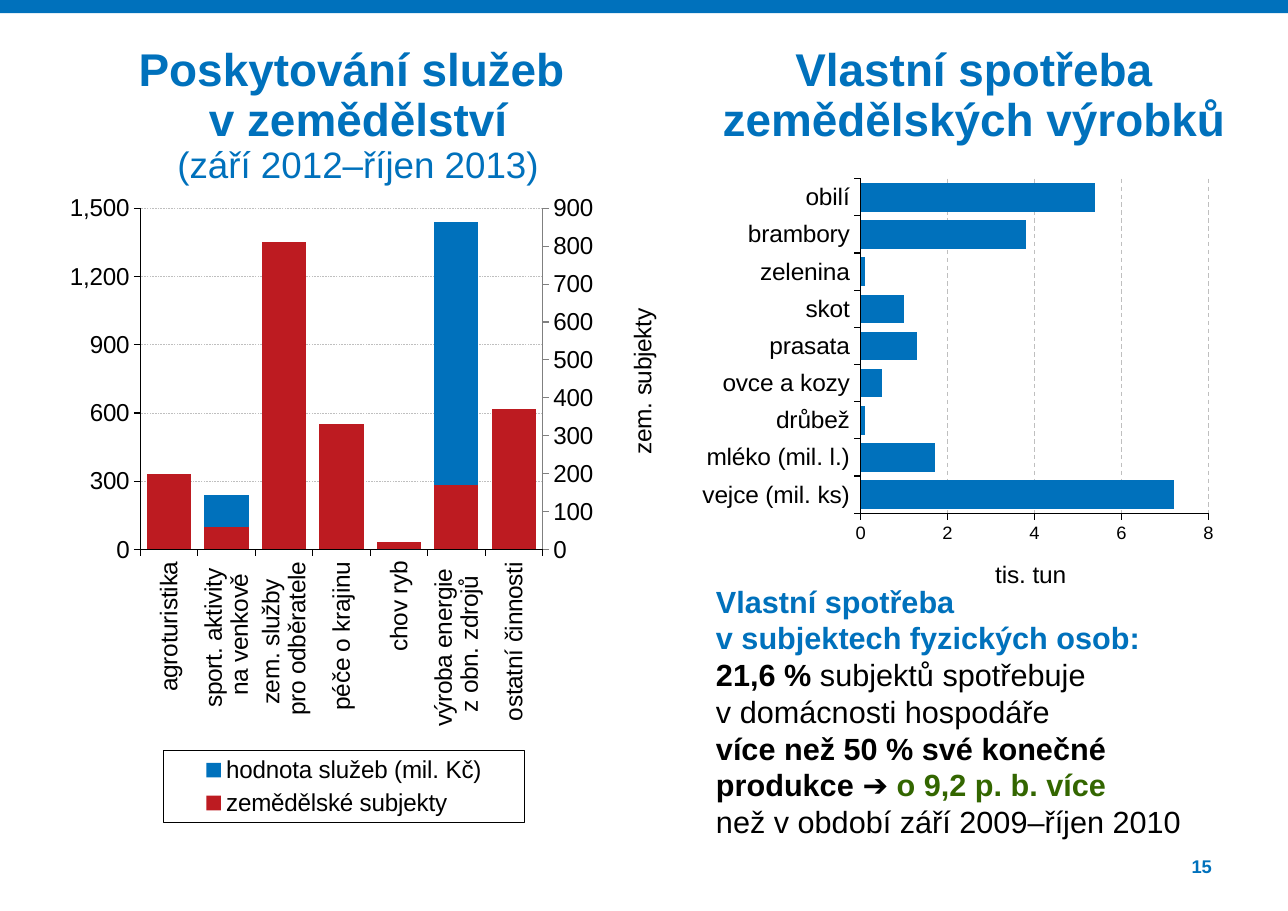
from copy import deepcopy
from dataclasses import dataclass
from typing import Any

from lxml.etree import SubElement
from pptx import Presentation
from pptx.chart.axis import ValueAxis
from pptx.chart.data import CategoryChartData
from pptx.dml.color import RGBColor
from pptx.enum.chart import XL_CHART_TYPE, XL_LEGEND_POSITION, XL_TICK_MARK
from pptx.enum.dml import MSO_LINE
from pptx.enum.shapes import MSO_SHAPE
from pptx.enum.text import MSO_ANCHOR, MSO_AUTO_SIZE, PP_ALIGN
from pptx.oxml.ns import qn
from pptx.util import Inches, Pt

BLUE, RED, GREEN, BLACK, GREY = "0071BC", "BD1B21", "336600", "000000", "BFBFBF"
UP = -5400000
Box = tuple[float, float, float, float]


@dataclass
class Run:
    text: str
    size: float = 20
    color: str = BLACK
    bold: bool = False


@dataclass
class Block:
    box: Box
    paras: list[list[Run]]
    align: Any = PP_ALIGN.CENTER
    inset: tuple[float, float] = (0, 0)
    space: float = 1.0


@dataclass
class Graph:
    box: Box
    kind: Any
    cats: list[str]
    series: dict[str, list[float]]
    plot: Box
    top: float
    step: float
    size: float
    grid: float
    dash: Any


def paint(color: Any, code: str) -> None:
    color.rgb = RGBColor.from_string(code)


def put(item: Any, **values: Any) -> None:
    for name, value in values.items():
        setattr(item, name, value)


def stroke(line: Any, code: str, width: float) -> None:
    line.fill.solid()
    paint(line.fill.fore_color, code)
    line.width = Pt(width)


def style(font: Any, size: float, code: str = BLACK, bold: bool = False) -> None:
    put(font, name="Arial", size=Pt(size), bold=bold)
    paint(font.color, code)


def write(shape: Any, block: Block) -> None:
    left, top, width, height = map(Inches, block.box)
    put(shape, left=left, top=top, width=width, height=height)
    frame = shape.text_frame
    side, edge = map(Inches, block.inset)
    put(frame, word_wrap=True, auto_size=MSO_AUTO_SIZE.NONE, vertical_anchor=MSO_ANCHOR.TOP,
        margin_left=side, margin_right=side, margin_top=edge, margin_bottom=edge)
    for i, runs in enumerate(block.paras):
        para = frame.add_paragraph() if i else frame.paragraphs[0]
        put(para, alignment=block.align, line_spacing=block.space)
        for part in runs:
            run = para.add_run()
            run.text = part.text
            style(run.font, part.size, part.color, part.bold)


def place(node: Any, index: int, spots: dict[str, Any]) -> None:
    """Fix a chart part at a share of the chart area."""
    layout = node.find(qn("c:layout"))
    if layout is None:
        layout = SubElement(node, qn("c:layout"))
        node.insert(index, layout)
    manual = SubElement(layout, qn("c:manualLayout"))
    for name, value in spots.items():
        SubElement(manual, qn(f"c:{name}")).set("val", str(value))


def label(axis: Any, text: str, x: float, y: float, turn: int = 0) -> None:
    axis.has_title = True
    title = axis.axis_title
    frame = title.text_frame
    frame.text = text
    style(frame.paragraphs[0].runs[0].font, 16)
    node = title._element
    node.find(".//" + qn("a:bodyPr")).set("rot", str(turn))
    place(node, 1, {"xMode": "edge", "yMode": "edge", "x": x, "y": y})


def draw(slide: Any, graph: Graph) -> Any:
    data = CategoryChartData(number_format="General")
    data.categories = graph.cats
    for name, values in graph.series.items():
        data.add_series(name, values)
    chart = slide.shapes.add_chart(graph.kind, *map(Inches, graph.box), data).chart
    put(chart, has_title=False, has_legend=False)
    style(chart.font, 16)
    bars = chart.plots[0]
    put(bars, gap_width=30, vary_by_categories=False)
    for row, code in zip(bars.series, (BLUE, RED)):
        row.format.fill.solid()
        paint(row.format.fill.fore_color, code)
    for axis in (chart.category_axis, chart.value_axis):
        put(axis, major_tick_mark=XL_TICK_MARK.OUTSIDE, minor_tick_mark=XL_TICK_MARK.NONE)
        stroke(axis.format.line, BLACK, 0.75)
    axis = chart.value_axis
    put(axis, minimum_scale=0, maximum_scale=graph.top, major_unit=graph.step,
        has_major_gridlines=True)
    style(axis.tick_labels.font, graph.size)
    put(axis.tick_labels, number_format="#,##0", number_format_is_linked=False)
    rule = axis.major_gridlines.format.line
    stroke(rule, GREY, graph.grid)
    rule.dash_style = graph.dash
    area = chart._chartSpace.find(".//" + qn("c:plotArea"))
    modes = {"layoutTarget": "inner", "xMode": "edge", "yMode": "edge"}
    place(area, 0, modes | dict(zip("xywh", graph.plot)))
    return chart


def split(chart: Any) -> ValueAxis:
    """Move the second series to its own axis on the right."""
    bars = chart.plots[0]._element
    cat, val = chart.category_axis._element, chart.value_axis._element
    twin, base, right = map(deepcopy, (bars, cat, val))
    bars.remove(bars.findall(qn("c:ser"))[1])
    twin.remove(twin.find(qn("c:ser")))
    bars.addnext(twin)
    val.addnext(right)
    right.addnext(base)
    for node, code in zip(twin.findall(qn("c:axId")), ("501", "502")):
        node.set("val", code)
    for node, own, other in ((base, "501", "502"), (right, "502", "501")):
        node.find(qn("c:axId")).set("val", own)
        node.find(qn("c:crossAx")).set("val", other)
    base.find(qn("c:delete")).set("val", "1")
    right.find(qn("c:axPos")).set("val", "r")
    right.find(qn("c:crosses")).set("val", "max")
    axis = ValueAxis(right)
    put(axis, maximum_scale=900, major_unit=100, has_major_gridlines=False)
    stroke(axis.format.line, "808080", 0.75)
    return axis


FARMS = Graph(
    (0, 1.61, 6.02, 5.98), XL_CHART_TYPE.COLUMN_CLUSTERED,
    ["agroturistika", "sport. aktivity \nna venkově", "zem. služby \npro odběratele",
     "péče o krajinu", "chov ryb", "výroba energie \nz obn. zdrojů", "ostatní činnosti"],
    {"hodnota služeb (mil. Kč)": [20, 240, 1090, 100, 0, 1440, 390],
     "zemědělské subjekty": [200, 60, 810, 330, 20, 170, 370]},
    (0.214, 0.047, 0.614, 0.518), 1500, 300, 16, 0.25, MSO_LINE.DASH)
GOODS = Graph(
    (6.08, 1.54, 5.2, 3.86), XL_CHART_TYPE.BAR_CLUSTERED,
    ["vejce (mil. ks)", "mléko (mil. l.)", "drůbež", "ovce a kozy", "prasata", "skot",
     "zelenina", "brambory", "obilí"],
    {"vlastní spotřeba": [7.2, 1.7, 0.1, 0.5, 1.3, 1, 0.1, 3.8, 5.4]},
    (0.333, 0.022, 0.607, 0.808), 8, 2, 12, 0.75, MSO_LINE.DASH)
HEAD = Block((0.89, 0.43, 4.72, 1.5), [
    [Run("Poskytování služeb ", 30, BLUE, True)],
    [Run("v zemědělství", 30, BLUE, True)],
    [Run("(září 2012–říjen 2013)", 24, BLUE)]], space=0.9)
BLOCKS = [
    Block((6.4, 0.43, 4.88, 1.02),
          [[Run("Vlastní spotřeba zemědělských výrobků", 30, BLUE, True)]], space=0.9),
    Block((6.4, 5.24, 4.72, 2.46), [
        [Run("Vlastní spotřeba", color=BLUE, bold=True)],
        [Run("v subjektech fyzických osob:", color=BLUE, bold=True)],
        [Run("21,6 %", bold=True), Run(" subjektů spotřebuje")],
        [Run("v domácnosti hospodáře")],
        [Run("více než 50 % své konečné produkce ", bold=True), Run("➔ "),
         Run("o 9,2 p. b. více", color=GREEN, bold=True)],
        [Run("než v období září 2009–říjen 2010")]], PP_ALIGN.LEFT, (0.1, 0.05)),
    Block((10.22, 7.76, 0.78, 0.21), [[Run("15", 12, BLUE, True)]], PP_ALIGN.RIGHT),
]


def main() -> None:
    deck = Presentation()
    put(deck, slide_width=Inches(11.69), slide_height=Inches(8.27))
    slide = deck.slides.add_slide(deck.slide_layouts[5])

    # Top band
    band = slide.shapes.add_shape(MSO_SHAPE.RECTANGLE, 0, 0, deck.slide_width, Inches(0.12))
    band.shadow.inherit = False
    band.fill.solid()
    paint(band.fill.fore_color, BLUE)
    band.line.fill.background()

    # Services chart with two value axes
    chart = draw(slide, FARMS)
    chart.category_axis._element.get_or_add_txPr().find(qn("a:bodyPr")).set("rot", str(UP))
    right = split(chart)
    label(chart.value_axis, "tržby v mil. Kč", 0.07, 0.19, UP)
    label(right, "zem. subjekty", 0.95, 0.19, UP)
    chart.has_legend = True
    key = chart.legend
    put(key, position=XL_LEGEND_POSITION.BOTTOM, include_in_layout=False)
    style(key.font, 16)
    node = key._element
    place(node, 1, {"xMode": "edge", "yMode": "edge", "x": 0.25, "y": 0.87, "w": 0.55, "h": 0.11})
    frame = deepcopy(chart.category_axis._element.find(qn("c:spPr")))
    node.find(qn("c:overlay")).addnext(frame)

    # Own use chart
    label(draw(slide, GOODS).value_axis, "tis. tun", 0.56, 0.93)

    # Texts
    write(slide.shapes.title, HEAD)
    for block in BLOCKS:
        write(slide.shapes.add_textbox(0, 0, 0, 0), block)
    deck.save("out.pptx")


if __name__ == "__main__":
    main()
